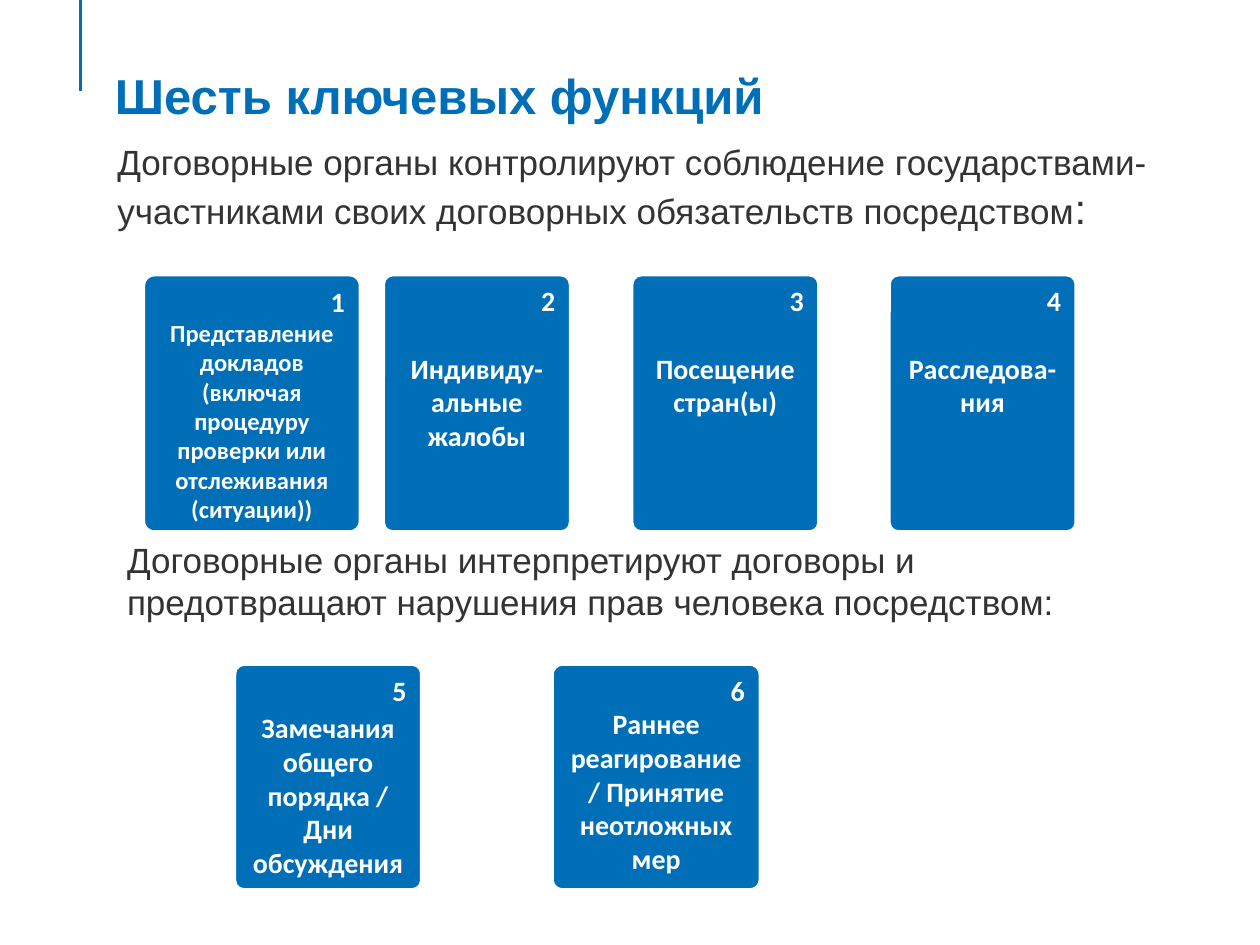
import pptx
import pptx.util
import pptx.dml.color
import pptx.enum.shapes
import pptx.enum.text
import lxml.etree

Pt = pptx.util.Pt
RGB = pptx.dml.color.RGBColor
ALIGN = pptx.enum.text.PP_ALIGN
ANCHOR = pptx.enum.text.MSO_ANCHOR

THEME = {
    "blue": RGB.from_string("006FB7"),
    "white": RGB.from_string("FFFFFF"),
    "dark": RGB.from_string("333333"),
    "heading_font": "Arial",
    "card_font": "Calibri",
    "title": 28,
    "lead": 20,
    "colon": 24,
    "card": 16,
    "card_small": 14,
}


def add_text(p, text, *, size, color, font, bold=False, align=ALIGN.LEFT, before=0):
    p.alignment = align
    p.space_before = Pt(before)
    r = p.add_run()
    r.text = text
    r.font.size = Pt(size)
    r.font.name = font
    r.font.bold = bold
    r.font.color.rgb = color


prs = pptx.Presentation()
prs.slide_width, prs.slide_height = Pt(720), Pt(540)
s = prs.slides.add_slide(prs.slide_layouts[5])

rule = s.shapes.add_connector(
    pptx.enum.shapes.MSO_CONNECTOR.STRAIGHT, Pt(46), Pt(0), Pt(46), Pt(52))
rule.line.color.rgb = THEME["blue"]
rule.line.width = Pt(2)
lxml.etree.SubElement(
    rule.element.spPr, "{http://schemas.openxmlformats.org/drawingml/2006/main}effectLst")

title = s.shapes.title
title.left, title.top, title.width, title.height = Pt(58.5), Pt(31.5), Pt(595.5), Pt(45.5)
title.text_frame.vertical_anchor = ANCHOR.MIDDLE
add_text(title.text_frame.paragraphs[0], "Шесть ключевых функций", size=THEME["title"],
         color=THEME["blue"], font=THEME["heading_font"], bold=True)

leads = [
    (60, 77, 607, 60.5, [
        ("Договорные органы контролируют соблюдение государствами-участниками "
         "своих договорных обязательств посредством", THEME["lead"]),
        (":", THEME["colon"])]),
    (65.5, 304, 572.5, 55.5, [
        ("Договорные органы интерпретируют договоры и предотвращают нарушения "
         "прав человека посредством:", THEME["lead"])]),
]
for x, y, w, h, runs in leads:
    tf = s.shapes.add_textbox(Pt(x), Pt(y), Pt(w), Pt(h)).text_frame
    tf.word_wrap = True
    tf.auto_size = pptx.enum.text.MSO_AUTO_SIZE.SHAPE_TO_FIT_TEXT
    for text, size in runs:
        add_text(tf.paragraphs[0], text, size=size, color=THEME["dark"],
                 font=THEME["heading_font"])

BIG, SMALL = THEME["card"], THEME["card_small"]
rows = [
    (157, 147, [
        (82, 124, SMALL, 0, ["Представление докладов (включая процедуру проверки или отслеживания",
                             "(ситуации))"]),
        (219, 107, BIG, 19.5, ["Индивиду-альные жалобы"]),
        (361, 107, BIG, 19.5, ["Посещение стран(ы)"]),
        (508, 107, BIG, 19.5, ["Расследова-ния"]),
    ]),
    (379.5, 129, [
        (134, 107, BIG, 2.5, ["Замечания общего порядка /", "Дни обсуждения"]),
        (315.5, 119, BIG, 0, ["Раннее реагирование / Принятие неотложных мер"]),
    ]),
]
number = 0
for y, h, cards in rows:
    for x, w, size, gap, texts in cards:
        number += 1
        sp = s.shapes.add_shape(
            pptx.enum.shapes.MSO_SHAPE.ROUNDED_RECTANGLE, Pt(x), Pt(y), Pt(w), Pt(h))
        sp.adjustments[0] = 0.05
        sp.shadow.inherit = False
        sp.fill.solid()
        sp.fill.fore_color.rgb = THEME["blue"]
        sp.line.color.rgb = THEME["white"]
        sp.line.width = Pt(2)
        tf = sp.text_frame
        tf.word_wrap = True
        tf.vertical_anchor = ANCHOR.TOP
        add_text(tf.paragraphs[0], str(number), size=BIG, color=THEME["white"],
                 font=THEME["card_font"], bold=True, align=ALIGN.RIGHT)
        for i, text in enumerate(texts):
            add_text(tf.add_paragraph(), text, size=size, color=THEME["white"],
                     font=THEME["card_font"], bold=True, align=ALIGN.CENTER,
                     before=0 if i else gap)

prs.save("out.pptx")
